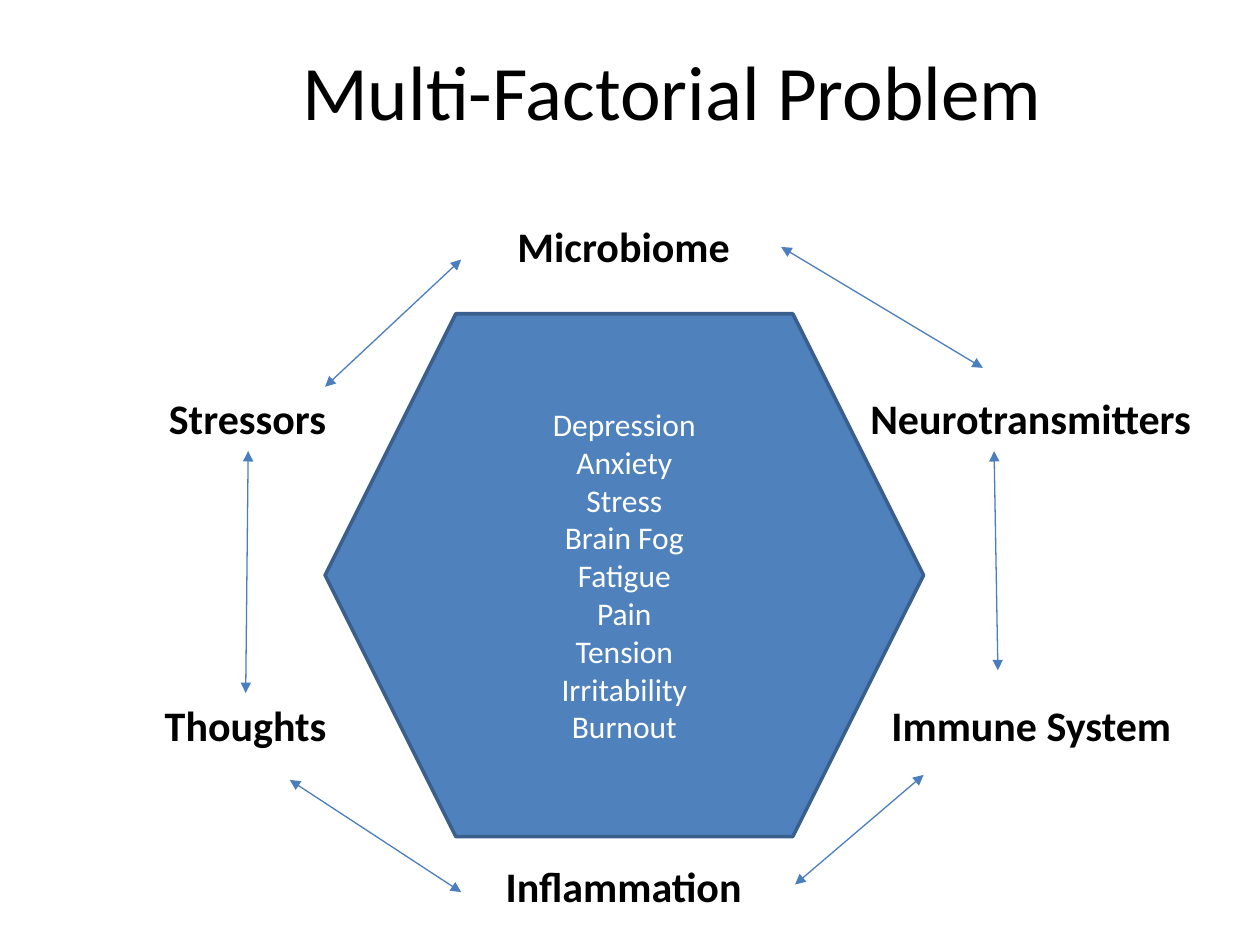
"""Build the Multi-Factorial Problem slide: a hexagon of symptoms ringed by linked factors."""

from dataclasses import dataclass

from lxml.etree import SubElement
from pptx import Presentation
from pptx.dml.color import RGBColor
from pptx.enum.shapes import MSO_CONNECTOR, MSO_SHAPE
from pptx.enum.text import MSO_ANCHOR, MSO_AUTO_SIZE, PP_ALIGN
from pptx.oxml.ns import qn
from pptx.slide import Slide
from pptx.text.text import TextFrame
from pptx.util import Inches, Pt

WIDTH, HEIGHT = Inches(10), Inches(7.5)
COLS, ROWS = 100, 75
FONT = "Calibri"
COLORS = {
    "fill": "4F81BD",
    "outline": "3A5F8C",
    "arrow": "4B7EBC",
    "dark": "000000",
    "light": "FFFFFF",
}
SYMPTOMS = [
    "Depression", "Anxiety", "Stress", "Brain Fog", "Fatigue",
    "Pain", "Tension", "Irritability", "Burnout",
]


@dataclass(frozen=True)
class Label:
    text: str
    col: float
    row: float
    cols: float
    rows: float = 5
    size: int = 24
    bold: bool = True
    align: PP_ALIGN = PP_ALIGN.CENTER


@dataclass(frozen=True)
class Arrow:
    col1: float
    row1: float
    col2: float
    row2: float


UPPER, LOWER = 30.7, 55
LABELS = [
    Label("Microbiome", 40, 17, 19),
    Label("Neurotransmitters", 67.9, UPPER, 27.8),
    Label("Immune System", 69.6, LOWER, 24.5),
    Label("Stressors", 12.3, UPPER, 14.7),
    Label("Inflammation", 39, 67.8, 21),
    Label("Thoughts", 12, LOWER, 15),
    Label("Multi-Factorial Problem", 23, 3, 61.4, 8.4, 44, False, PP_ALIGN.LEFT),
]
ARROWS = [
    Arrow(25.8, 30.7, 36.6, 20.6),
    Arrow(19.7, 35.8, 19.5, 55),
    Arrow(23, 61.9, 36.6, 70.8),
    Arrow(63.1, 70.2, 73.3, 61.5),
    Arrow(79.2, 53.2, 78.9, 35.8),
    Arrow(62, 19.6, 78, 29.2),
]


def x(cols: float) -> int:
    return round(WIDTH * cols / COLS)


def y(rows: float) -> int:
    return round(HEIGHT * rows / ROWS)


def rgb(name: str) -> RGBColor:
    return RGBColor.from_string(COLORS[name])


def format_text(tf: TextFrame, size: int, color: str, bold: bool, align: PP_ALIGN) -> None:
    for p in tf.paragraphs:
        p.alignment = align
        for r in p.runs:
            r.font.name = FONT
            r.font.size = Pt(size)
            r.font.bold = bold
            r.font.color.rgb = rgb(color)


def add_hexagon(s: Slide) -> None:
    sp = s.shapes.add_shape(MSO_SHAPE.HEXAGON, x(25.8), y(24.9), x(47.5), y(41.5))
    sp.shadow.inherit = False
    sp.fill.solid()
    sp.fill.fore_color.rgb = rgb("fill")
    sp.line.color.rgb = rgb("outline")
    sp.line.width = Pt(2)
    tf = sp.text_frame
    tf.text = "\n".join(SYMPTOMS)
    tf.vertical_anchor = MSO_ANCHOR.MIDDLE
    format_text(tf, 18, "light", False, PP_ALIGN.CENTER)


def add_label(s: Slide, label: Label) -> None:
    sp = s.shapes.add_textbox(x(label.col), y(label.row), x(label.cols), y(label.rows))
    tf = sp.text_frame
    tf.text = label.text
    tf.word_wrap = False
    tf.auto_size = MSO_AUTO_SIZE.SHAPE_TO_FIT_TEXT
    format_text(tf, label.size, "dark", label.bold, label.align)


def add_arrow(s: Slide, arrow: Arrow) -> None:
    sp = s.shapes.add_connector(
        MSO_CONNECTOR.STRAIGHT,
        x(arrow.col1), y(arrow.row1), x(arrow.col2), y(arrow.row2),
    )
    sp.line.color.rgb = rgb("arrow")
    sp.line.width = Pt(0.75)
    ln = sp.line._get_or_add_ln()
    for end in ("a:headEnd", "a:tailEnd"):
        SubElement(ln, qn(end), type="triangle")
    SubElement(sp._element.spPr, qn("a:effectLst"))


def main() -> None:
    prs = Presentation()
    prs.slide_width, prs.slide_height = WIDTH, HEIGHT
    s = prs.slides.add_slide(prs.slide_layouts[6])
    add_hexagon(s)
    for label in LABELS:
        add_label(s, label)
    for arrow in ARROWS:
        add_arrow(s, arrow)
    prs.save("out.pptx")


if __name__ == "__main__":
    main()
